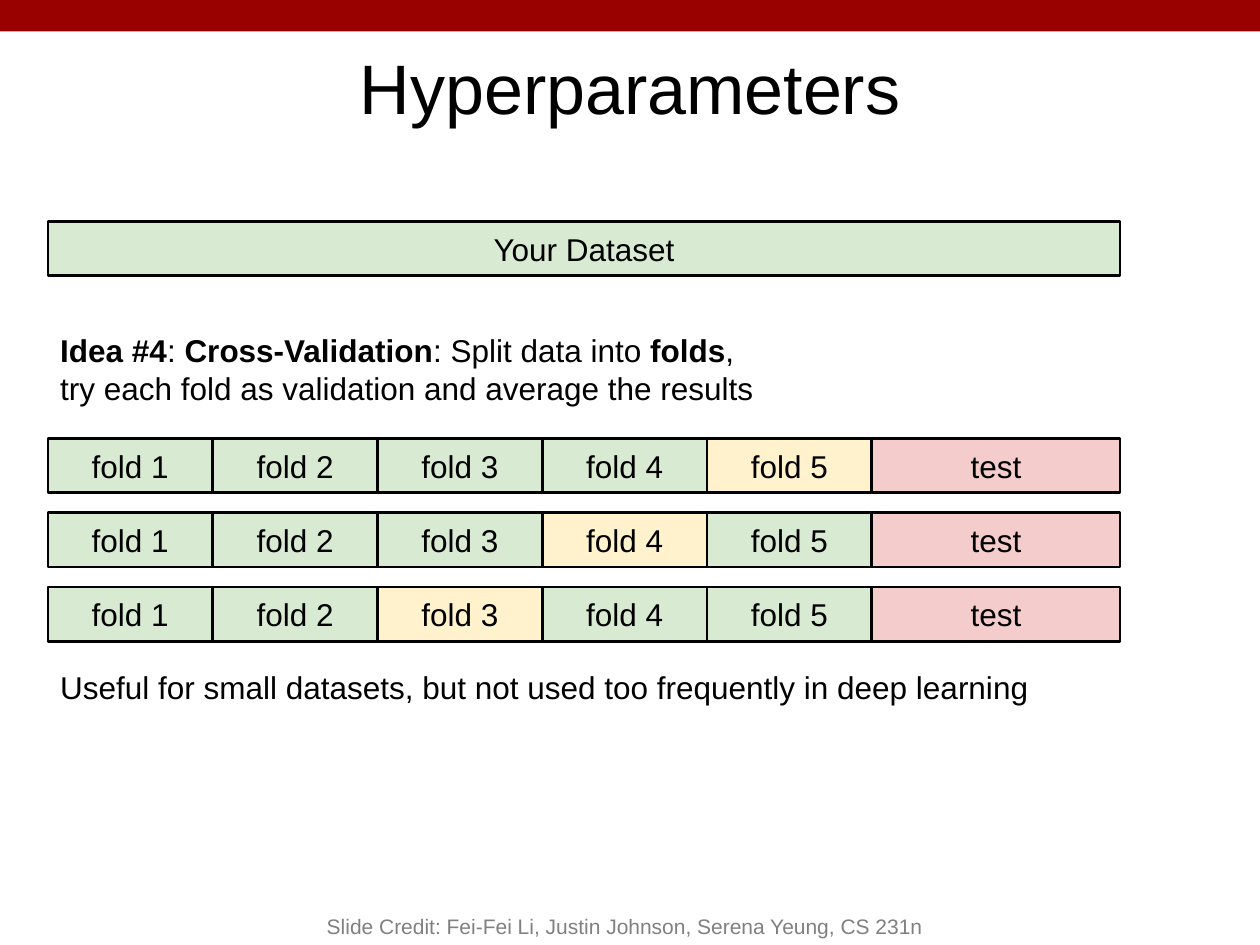
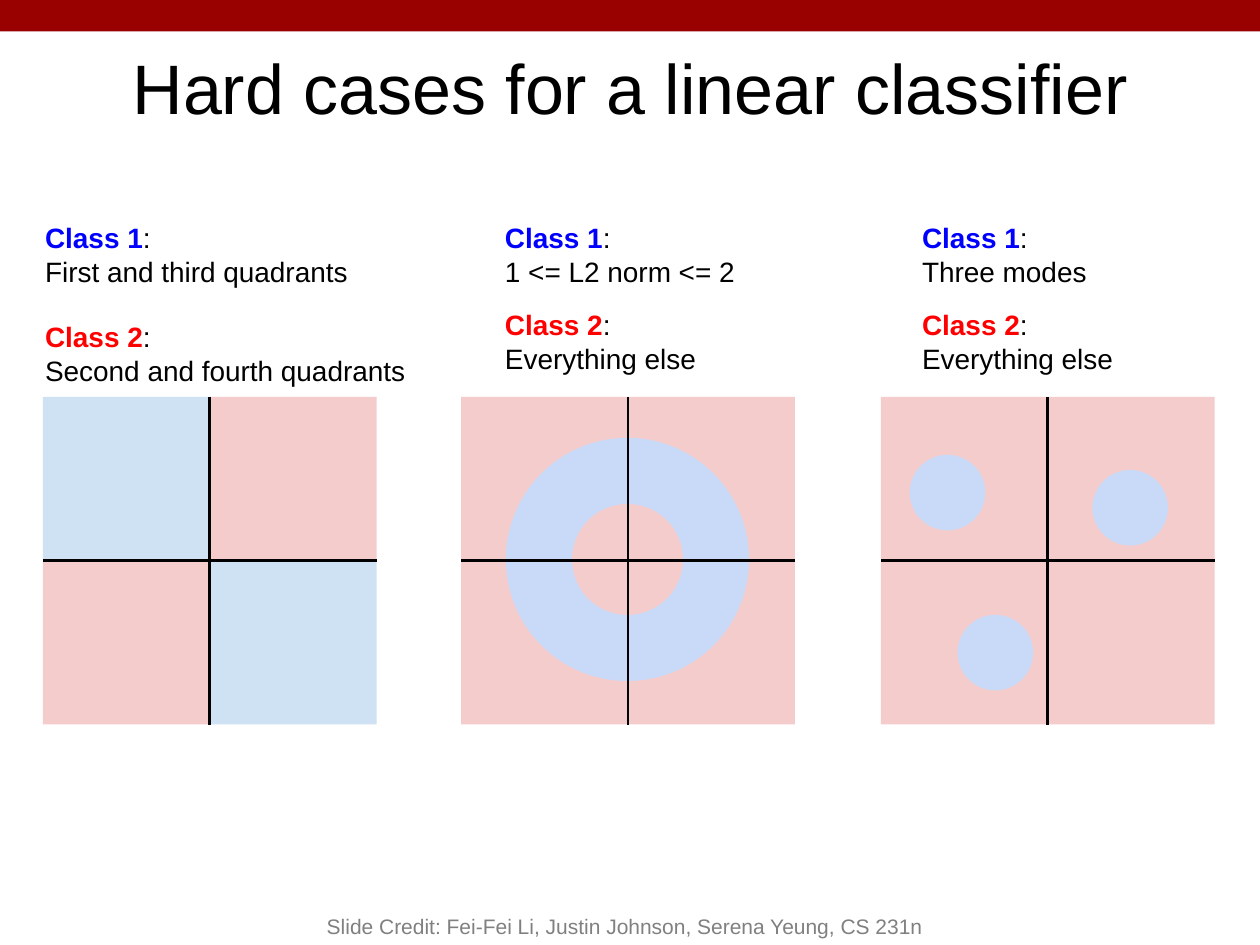
import pptx
import pptx.util
import pptx.dml.color
import pptx.enum.shapes
import pptx.enum.text
import pptx.oxml.ns
from lxml import etree

Inches = pptx.util.Inches
Pt = pptx.util.Pt
RGBColor = pptx.dml.color.RGBColor
Kind = pptx.enum.shapes.MSO_SHAPE
Align = pptx.enum.text.PP_ALIGN
Anchor = pptx.enum.text.MSO_ANCHOR

FONT = "Arial"
BLACK = RGBColor(0x00, 0x00, 0x00)
GREY = RGBColor(0x80, 0x80, 0x80)
BAND = RGBColor(0x99, 0x00, 0x00)
GREEN = RGBColor(0xD9, 0xEA, 0xD3)
CREAM = RGBColor(0xFF, 0xF2, 0xCC)
PINK = RGBColor(0xF4, 0xCC, 0xCC)
SKY = RGBColor(0xCF, 0xE2, 0xF3)
PALE = RGBColor(0xC9, 0xDA, 0xF8)
BLUE = RGBColor(0x00, 0x00, 0xFF)
RED = RGBColor(0xFF, 0x00, 0x00)

CREDIT = "Slide Credit: Fei-Fei Li, Justin Johnson, Serena Yeung, CS 231n"
LEFT, BAR = 0.38, 0.43
FOLDS, FOLD, TEST = 5, 1.308, 1.97
WIDE, HIGH = 2.65, 2.6
PANEL = 3.15


def add_run(para, text, size, color=BLACK, bold=False):
    run = para.add_run()
    run.text = text
    run.font.name = FONT
    run.font.size = Pt(size)
    run.font.color.rgb = color
    run.font.bold = bold


def set_frame(frame, anchor, inset=0.1):
    frame.word_wrap = True
    frame.vertical_anchor = anchor
    frame.margin_left = frame.margin_right = Inches(inset)
    frame.margin_top = frame.margin_bottom = Inches(inset)


def add_text(slide, box, paras, size, align=Align.LEFT, anchor=Anchor.TOP,
             gaps=None):
    """Each paragraph is a list of (text, color, bold); gaps maps index to space before."""
    frame = slide.shapes.add_textbox(*map(Inches, box)).text_frame
    set_frame(frame, anchor)
    for i, runs in enumerate(paras):
        para = frame.add_paragraph() if i else frame.paragraphs[0]
        para.alignment = align
        if gaps and i in gaps:
            para.space_before = Pt(gaps[i])
        for text, color, bold in runs:
            add_run(para, text, size, color, bold)
    return frame


def add_block(slide, box, fill, kind=Kind.RECTANGLE):
    block = slide.shapes.add_shape(kind, *map(Inches, box))
    block.shadow.inherit = False
    block.fill.solid()
    block.fill.fore_color.rgb = fill
    block.line.fill.background()
    return block


def add_bar(slide, box, fill, label):
    bar = add_block(slide, box, fill)
    bar.line.color.rgb = BLACK
    bar.line.width = Pt(1.5)
    set_frame(bar.text_frame, Anchor.MIDDLE)
    para = bar.text_frame.paragraphs[0]
    para.alignment = Align.CENTER
    add_run(para, label, 18)


def add_disc(slide, x, y, size, fill):
    """Circle centred on x, y."""
    add_block(slide, (x - size / 2, y - size / 2, size, size), fill, Kind.OVAL)


def add_line(slide, x1, y1, x2, y2):
    line = slide.shapes.add_connector(
        pptx.enum.shapes.MSO_CONNECTOR.STRAIGHT,
        Inches(x1), Inches(y1), Inches(x2), Inches(y2))
    line.line.color.rgb = BLACK
    line.line.width = Pt(1.5)
    props = line._element.spPr
    etree.SubElement(props, pptx.oxml.ns.qn("a:effectLst"))
    return line


def add_axes(slide, left, panel=None):
    """Cross through a panel, joined to its sides when the panel is one block."""
    x, y = left + WIDE / 2, PANEL + HIGH / 2
    down = add_line(slide, x, PANEL, x, PANEL + HIGH)
    across = add_line(slide, left + WIDE, y, left, y)
    if panel is not None:
        down.begin_connect(panel, 0)
        down.end_connect(panel, 2)
        across.begin_connect(panel, 3)
        across.end_connect(panel, 1)


def add_case(slide, box, first, second, gap):
    paras = [
        [("Class 1", BLUE, True), (":", BLACK, False)],
        [(first, BLACK, False)],
        [("Class 2", RED, True), (":", BLACK, False)],
        [(second, BLACK, False)],
    ]
    add_text(slide, box, paras, 16, gaps={2: gap})


def add_slide(deck, title):
    slide = deck.slides.add_slide(deck.slide_layouts[6])
    add_block(slide, (0, 0, 10, 0.25), BAND)
    add_text(slide, (0.34, 0.25, 9.32, 0.84), [[(title, BLACK, False)]], 40,
             Align.CENTER)
    frame = add_text(slide, (2, 7, 5.92, 0.5), [[(CREDIT, GREY, False)]], 12,
                     Align.CENTER, Anchor.BOTTOM)
    frame.margin_top = frame.margin_bottom = Inches(0.05)
    return slide


def draw_folds(deck):
    slide = add_slide(deck, "Hyperparameters")
    add_bar(slide, (LEFT, 1.76, FOLDS * FOLD + TEST, BAR), GREEN,
            "Your Dataset")
    idea = [
        ("Idea #4", BLACK, True),
        (": ", BLACK, False),
        ("Cross-Validation", BLACK, True),
        (": Split data into ", BLACK, False),
        ("folds", BLACK, True),
        (", try each fold as validation and average the results", BLACK, False),
    ]
    add_text(slide, (LEFT, 2.53, 5.86, 0.85), [idea], 18)
    for row, held in enumerate((5, 4, 3)):
        top = 3.48 + row * 0.59
        add_bar(slide, (LEFT + FOLDS * FOLD, top, TEST, BAR), PINK, "test")
        for n in range(1, FOLDS + 1):
            add_bar(slide, (LEFT + (n - 1) * FOLD, top, FOLD, BAR),
                    CREAM if n == held else GREEN, f"fold {n}")
    note = "Useful for small datasets, but not used too frequently in deep learning"
    add_text(slide, (LEFT, 5.2, 8.34, 0.5), [[(note, BLACK, False)]], 18)


def draw_cases(deck):
    slide = add_slide(deck, "Hard cases for a linear classifier")
    quad, ring, modes = 0.34, 3.66, 6.99

    for row in range(2):
        for col in range(2):
            add_block(slide, (quad + col * WIDE / 2, PANEL + row * HIGH / 2,
                              WIDE / 2, HIGH / 2),
                      SKY if row == col else PINK)
    add_axes(slide, quad)
    add_case(slide, (0.26, 1.65, 3.16, 1.24), "First and third quadrants",
             "Second and fourth quadrants", 18.4)

    panel = add_block(slide, (ring, PANEL, WIDE, HIGH), PINK)
    for size, fill in ((1.93, PALE), (0.88, PINK)):
        add_disc(slide, 4.98, 4.44, size, fill)
    add_axes(slide, ring, panel)
    add_case(slide, (3.91, 1.65, 2.17, 1.53), "1 <= L2 norm <= 2",
             "Everything else", 11.5)

    panel = add_block(slide, (modes, PANEL, WIDE, HIGH), PINK)
    for x, y in ((7.9, 5.18), (7.52, 3.91), (8.97, 4.03)):
        add_disc(slide, x, y, 0.6, PALE)
    add_axes(slide, modes, panel)
    add_case(slide, (7.22, 1.65, 2.17, 1.53), "Three modes",
             "Everything else", 11.5)


def main():
    deck = pptx.Presentation()
    deck.slide_width, deck.slide_height = Inches(10), Inches(7.5)
    draw_folds(deck)
    draw_cases(deck)
    deck.save("out.pptx")


if __name__ == "__main__":
    main()
